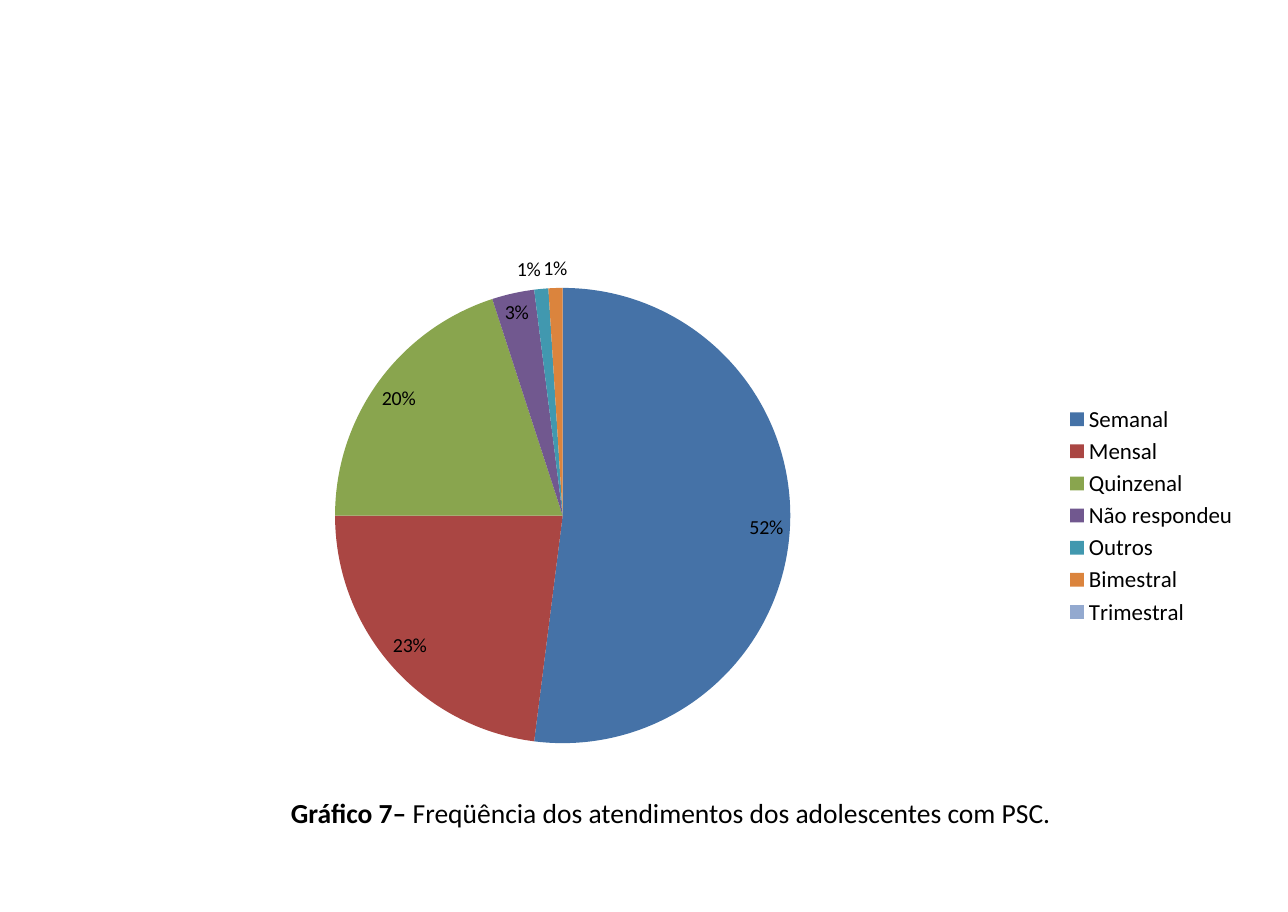
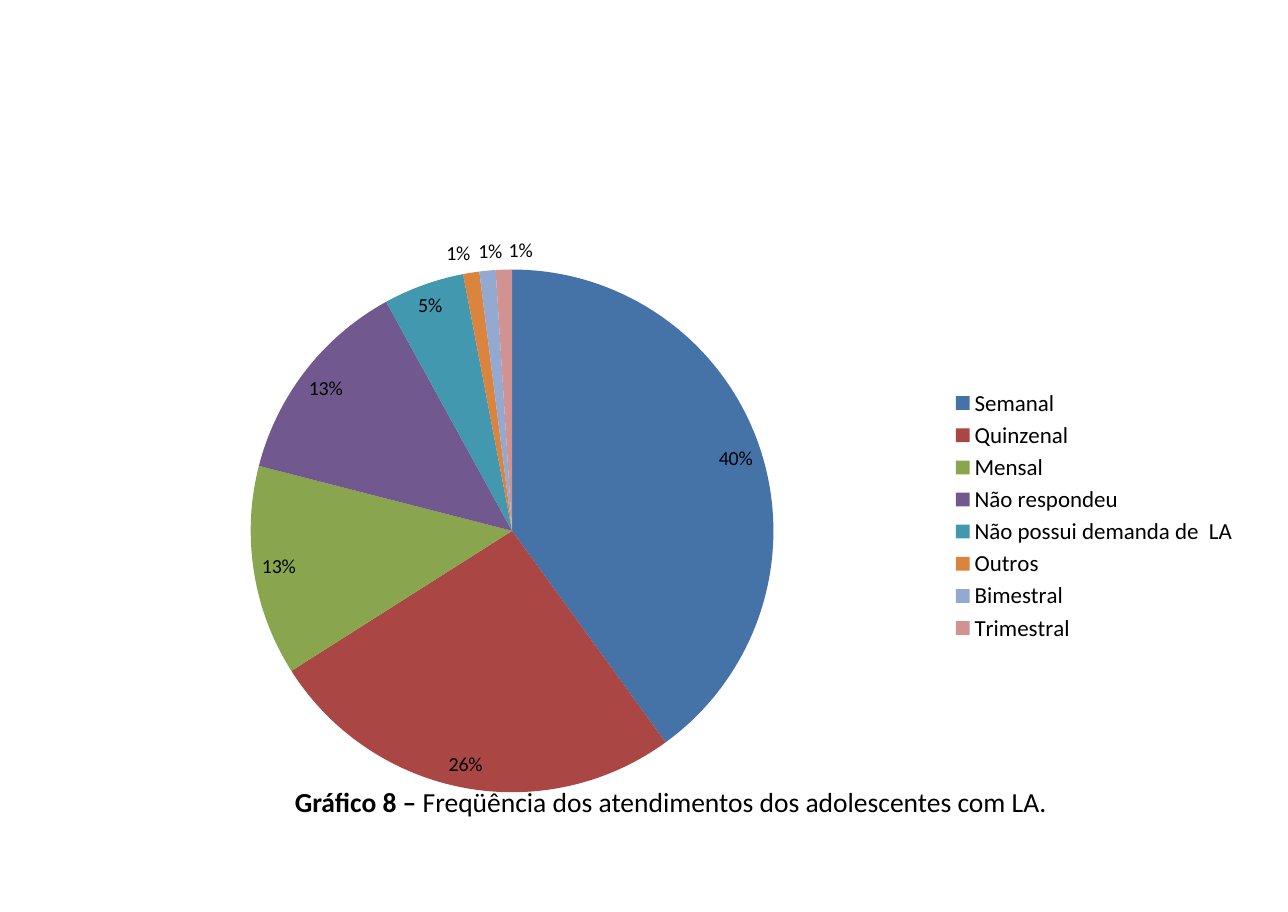
import pptx
import pptx.chart.data
import pptx.dml.color
import pptx.enum.chart
import pptx.enum.text
import pptx.util
from lxml import etree

Cm, Pt = pptx.util.Cm, pptx.util.Pt

FONT = "Calibri"
COLORS = {"text": "000000", "background": "FFFFFF"}
SLICE_COLORS = {
    "blue": "4572A7",
    "red": "AA4643",
    "green": "89A54E",
    "purple": "71588F",
    "teal": "4198AF",
    "orange": "DB843D",
    "light blue": "93A9CF",
    "pink": "D19392",
}

SLIDES = [
    {
        "label": "Gráfico 7– ",
        "caption": "Freqüência dos atendimentos dos adolescentes com PSC.",
        "caption_top": 18.21,
        "frequencies": [
            ("Semanal", 52),
            ("Mensal", 23),
            ("Quinzenal", 20),
            ("Não respondeu", 3),
            ("Outros", 1),
            ("Bimestral", 1),
            ("Trimestral", 0),
        ],
        "plot": {"x": 0.09, "y": 0.11, "w": 0.65, "h": 0.78},
    },
    {
        "label": "Gráfico 8 – ",
        "caption": "Freqüência dos atendimentos dos adolescentes com LA.",
        "caption_top": 17.96,
        "frequencies": [
            ("Semanal", 40),
            ("Quinzenal", 26),
            ("Mensal", 13),
            ("Não respondeu", 13),
            ("Não possui demanda de  LA", 5),
            ("Outros", 1),
            ("Bimestral", 1),
            ("Trimestral", 1),
        ],
        "plot": None,
    },
]


def rgb(color):
    return pptx.dml.color.RGBColor.from_string(color)


def format_font(font, size, bold=False, color=COLORS["text"]):
    font.name = FONT
    font.size = Pt(size)
    font.bold = bold
    font.color.rgb = rgb(color)


def add_text(paragraph, text, **style):
    run = paragraph.add_run()
    run.text = text
    format_font(run.font, **style)


def add_caption(slide, label, caption, top):
    title = slide.shapes.title
    title.left, title.top = Cm(1.27), Cm(top)
    title.width, title.height = Cm(28.4), Cm(1.07)
    frame = title.text_frame
    frame.word_wrap = True
    frame.auto_size = pptx.enum.text.MSO_AUTO_SIZE.NONE
    frame.vertical_anchor = pptx.enum.text.MSO_ANCHOR.TOP
    frame.margin_left = frame.margin_right = Cm(0.28)
    frame.margin_top = frame.margin_bottom = Cm(0.15)
    paragraph = frame.paragraphs[0]
    paragraph.alignment = pptx.enum.text.PP_ALIGN.CENTER
    add_text(paragraph, label, size=18, bold=True)
    add_text(paragraph, caption, size=18)


def place_plot(chart, plot):
    """Fix the inner plot area, in fractions of the chart."""
    namespace = "http://schemas.openxmlformats.org/drawingml/2006/chart"
    tag = f"{{{namespace}}}"
    plot_area = chart.element.find(f".//{tag}plotArea")
    layout = plot_area.find(f"{tag}layout")
    if layout is None:
        layout = etree.Element(f"{tag}layout")
        plot_area.insert(0, layout)
    manual = etree.SubElement(layout, f"{tag}manualLayout")
    settings = {"layoutTarget": "inner", "xMode": "edge", "yMode": "edge", **plot}
    for name, value in settings.items():
        etree.SubElement(manual, f"{tag}{name}", val=str(value))


def add_pie(slide, frequencies, plot):
    data = pptx.chart.data.CategoryChartData()
    data.categories = [name for name, _ in frequencies]
    data.add_series("Frequência", [value for _, value in frequencies])
    chart = slide.shapes.add_chart(
        pptx.enum.chart.XL_CHART_TYPE.PIE,
        Cm(1.75), Cm(5.16), Cm(27.05), Cm(13.46), data,
    ).chart
    chart.has_title = False
    format_font(chart.font, size=10)

    chart.has_legend = True
    chart.legend.position = pptx.enum.chart.XL_LEGEND_POSITION.RIGHT
    chart.legend.include_in_layout = False
    format_font(chart.legend.font, size=15)

    pie = chart.plots[0]
    pie.vary_by_categories = True
    series = pie.series[0]
    for index, color in zip(range(len(frequencies)), SLICE_COLORS.values()):
        fill = series.points[index].format.fill
        fill.solid()
        fill.fore_color.rgb = rgb(color)

    labels = series.data_labels
    labels.show_value = False
    labels.show_percentage = True
    labels.number_format = "0%"
    labels.number_format_is_linked = False
    labels.position = pptx.enum.chart.XL_LABEL_POSITION.BEST_FIT
    format_font(labels.font, size=13)
    if plot:
        place_plot(chart, plot)


def main():
    presentation = pptx.Presentation()
    presentation.slide_width, presentation.slide_height = Cm(29.7), Cm(21.03)
    background = presentation.slide_master.background.fill
    background.solid()
    background.fore_color.rgb = rgb(COLORS["background"])
    title_only = presentation.slide_layouts[5]
    for content in SLIDES:
        slide = presentation.slides.add_slide(title_only)
        add_caption(slide, content["label"], content["caption"], content["caption_top"])
        add_pie(slide, content["frequencies"], content["plot"])
    presentation.save("out.pptx")


if __name__ == "__main__":
    main()
